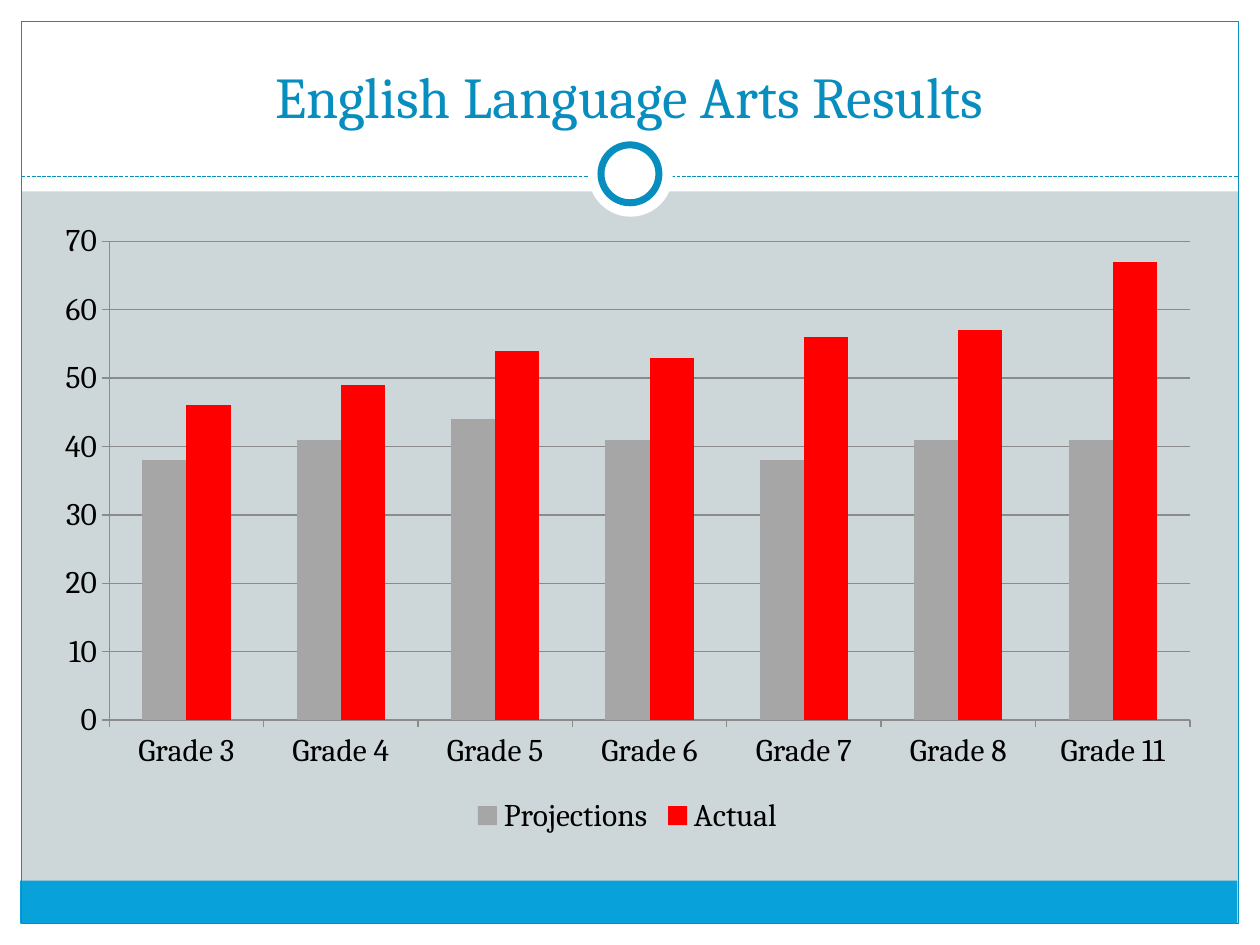
from dataclasses import dataclass
from typing import Optional

import pptx
import pptx.chart.data
import pptx.dml.color
import pptx.enum.chart
import pptx.enum.dml
import pptx.enum.shapes
import pptx.enum.text
import pptx.oxml.ns
import pptx.util
from lxml import etree

RGBColor = pptx.dml.color.RGBColor
Shape = pptx.enum.shapes.MSO_SHAPE

WHITE = RGBColor(0xFF, 0xFF, 0xFF)
BLACK = RGBColor(0x00, 0x00, 0x00)
BACKDROP = RGBColor(0xCD, 0xD7, 0xD9)
FOOTER_BLUE = RGBColor(0x08, 0xA1, 0xD9)
ACCENT_BLUE = RGBColor(0x07, 0x8E, 0xBF)
AXIS_GRAY = RGBColor(0x8B, 0x8B, 0x8B)
BAR_GRAY = RGBColor(0xA6, 0xA6, 0xA6)
BAR_RED = RGBColor(0xFF, 0x00, 0x00)

FONT = "Cambria"
EMU_PER_PX = 9144  # 100 px to the inch
WIDTH, HEIGHT, MARGIN = 1000, 750, 17


def px(length: int) -> pptx.util.Emu:
    return pptx.util.Emu(length * EMU_PER_PX)


@dataclass(frozen=True)
class Panel:
    left: int
    top: int
    width: int
    height: int
    fill: Optional[RGBColor] = WHITE
    line: Optional[RGBColor] = None
    line_pt: float = 0.75
    kind: Shape = Shape.RECTANGLE


@dataclass(frozen=True)
class Series:
    name: str
    values: tuple[int, ...]
    color: RGBColor


FRAME_PANELS = [
    Panel(0, HEIGHT - MARGIN, WIDTH, MARGIN),
    Panel(0, 0, WIDTH, 152),
    Panel(0, 0, MARGIN, HEIGHT),
    Panel(WIDTH - MARGIN, 0, MARGIN, HEIGHT),
    Panel(16, 699, 966, 34, fill=FOOTER_BLUE),
    Panel(MARGIN, MARGIN, WIDTH - 2 * MARGIN, HEIGHT - 2 * MARGIN,
          fill=None, line=ACCENT_BLUE),
]
RING_PANELS = [
    Panel(467, 105, 67, 67, kind=Shape.OVAL),
    Panel(477, 115, 46, 46, line=ACCENT_BLUE, line_pt=4, kind=Shape.OVAL),
]

GRADES = [f"Grade {grade}" for grade in (3, 4, 5, 6, 7, 8, 11)]
RESULTS = [
    Series("Projections", (38, 41, 44, 41, 38, 41, 41), BAR_GRAY),
    Series("Actual", (46, 49, 54, 53, 56, 57, 67), BAR_RED),
]


def draw_panel(slide, panel: Panel) -> None:
    shape = slide.shapes.add_shape(
        panel.kind, px(panel.left), px(panel.top), px(panel.width), px(panel.height))
    shape.shadow.inherit = False
    if panel.fill is None:
        shape.fill.background()
    else:
        shape.fill.solid()
        shape.fill.fore_color.rgb = panel.fill
    if panel.line is None:
        shape.line.fill.background()
    else:
        shape.line.color.rgb = panel.line
        shape.line.width = pptx.util.Pt(panel.line_pt)


def draw_divider(slide, top: int) -> None:
    divider = slide.shapes.add_connector(
        pptx.enum.shapes.MSO_CONNECTOR.STRAIGHT,
        px(MARGIN), px(top), px(WIDTH - MARGIN), px(top))
    divider.line.color.rgb = ACCENT_BLUE
    divider.line.width = pptx.util.Pt(0.75)
    divider.line.dash_style = pptx.enum.dml.MSO_LINE.SQUARE_DOT
    etree.SubElement(divider._element.spPr, pptx.oxml.ns.qn("a:effectLst"))


def format_font(font, *, size: float, color: RGBColor) -> None:
    font.name = FONT
    font.size = pptx.util.Pt(size)
    font.bold = False
    font.color.rgb = color


def write_text(frame, text: str, *, size: float, color: RGBColor,
               align=pptx.enum.text.PP_ALIGN.CENTER,
               anchor=pptx.enum.text.MSO_ANCHOR.BOTTOM) -> None:
    frame.word_wrap = True
    frame.auto_size = pptx.enum.text.MSO_AUTO_SIZE.NONE
    frame.vertical_anchor = anchor
    paragraph = frame.paragraphs[0]
    paragraph.alignment = align
    run = paragraph.add_run()
    run.text = text
    format_font(run.font, size=size, color=color)


def draw_title(slide, text: str) -> None:
    title = slide.shapes.title
    title.left, title.top, title.width, title.height = px(33), px(25), px(933), px(83)
    write_text(title.text_frame, text, size=33, color=ACCENT_BLUE)
    # Bring the title in front of the white header band
    slide.shapes._spTree.append(title._element)


def draw_results_chart(slide, results: list[Series]) -> None:
    chart_data = pptx.chart.data.CategoryChartData()
    chart_data.categories = GRADES
    for series in results:
        chart_data.add_series(series.name, series.values)
    chart = slide.shapes.add_chart(
        pptx.enum.chart.XL_CHART_TYPE.COLUMN_CLUSTERED,
        px(33), px(167), px(930), px(500), chart_data).chart
    format_font(chart.font, size=18, color=BLACK)
    chart.has_title = False
    chart.has_legend = True
    chart.legend.position = pptx.enum.chart.XL_LEGEND_POSITION.BOTTOM
    chart.legend.include_in_layout = False

    # Bars
    plot = chart.plots[0]
    plot.gap_width = 150
    plot.overlap = 0
    plot.vary_by_categories = False
    for bars, series in zip(plot.series, results):
        bars.format.fill.solid()
        bars.format.fill.fore_color.rgb = series.color
        bars.invert_if_negative = False

    # Axes and gridlines
    scores = chart.value_axis
    scores.minimum_scale, scores.maximum_scale, scores.major_unit = 0, 70, 10
    scores.has_major_gridlines = True
    for axis in (chart.category_axis, scores):
        axis.major_tick_mark = pptx.enum.chart.XL_TICK_MARK.OUTSIDE
        axis.minor_tick_mark = pptx.enum.chart.XL_TICK_MARK.NONE
    for ruled in (chart.category_axis, scores, scores.major_gridlines):
        ruled.format.line.color.rgb = AXIS_GRAY
        ruled.format.line.width = pptx.util.Pt(0.75)


def main() -> None:
    deck = pptx.Presentation()
    deck.slide_width, deck.slide_height = px(WIDTH), px(HEIGHT)
    title_only = deck.slide_layouts[5]
    slide = deck.slides.add_slide(title_only)
    slide.background.fill.solid()
    slide.background.fill.fore_color.rgb = BACKDROP

    # Frame, divider and ring
    for panel in FRAME_PANELS:
        draw_panel(slide, panel)
    draw_divider(slide, top=140)
    for panel in RING_PANELS:
        draw_panel(slide, panel)

    # Content
    draw_title(slide, "English Language Arts Results")
    draw_results_chart(slide, RESULTS)
    deck.save("out.pptx")


if __name__ == "__main__":
    main()
